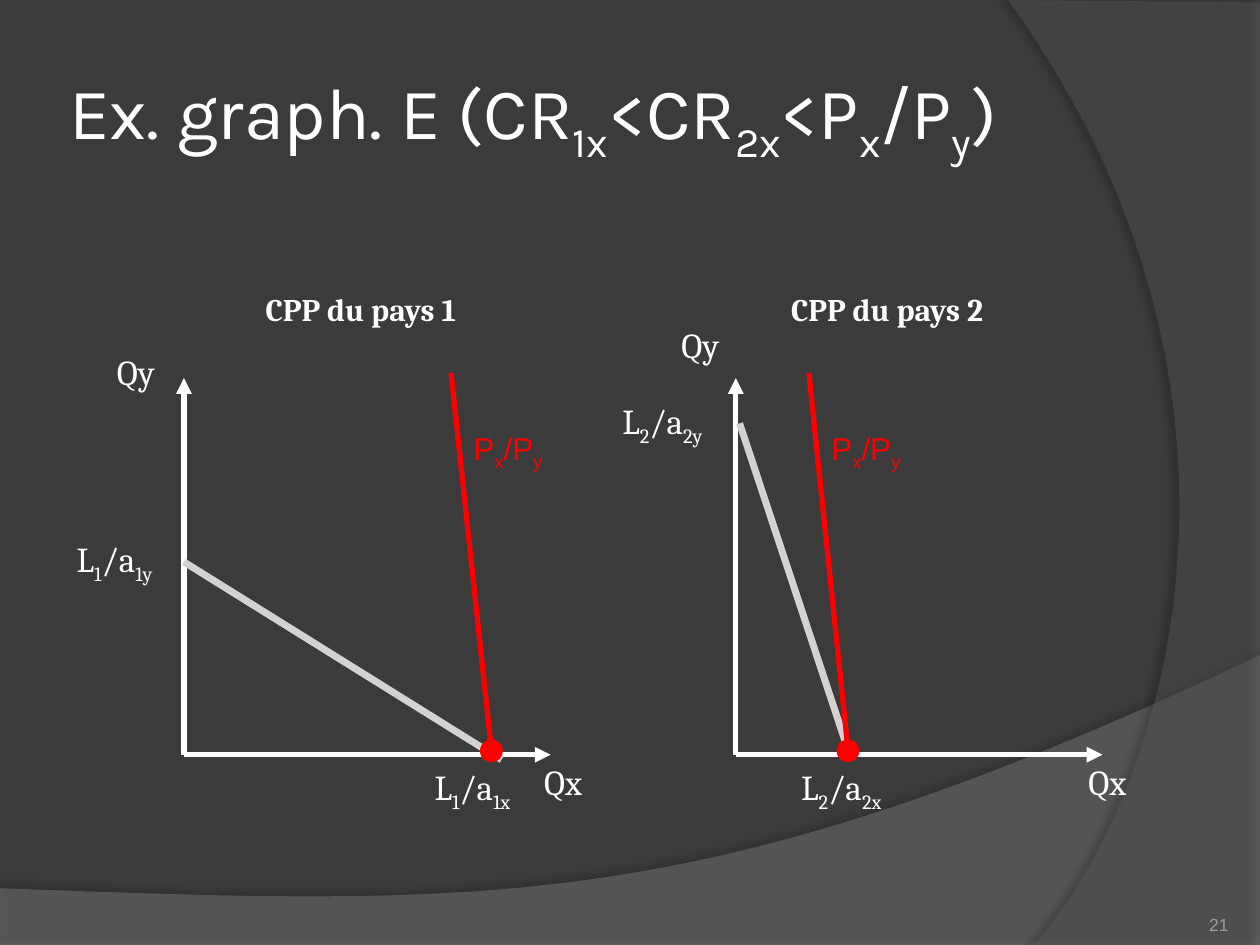
"""Build the slide comparing the production possibility curves of two countries."""
from lxml import etree
from pptx import Presentation
from pptx.dml.color import RGBColor
from pptx.enum.shapes import MSO_CONNECTOR, MSO_SHAPE
from pptx.enum.text import MSO_ANCHOR, MSO_AUTO_SIZE, PP_ALIGN
from pptx.oxml import parse_xml
from pptx.oxml.ns import nsdecls, qn
from pptx.util import Inches, Pt

STRAIGHT, OVAL = MSO_CONNECTOR.STRAIGHT, MSO_SHAPE.OVAL
MIDDLE, BOTTOM = MSO_ANCHOR.MIDDLE, MSO_ANCHOR.BOTTOM
LEFT, RIGHT = PP_ALIGN.LEFT, PP_ALIGN.RIGHT
FIT = MSO_AUTO_SIZE.SHAPE_TO_FIT_TEXT

THEME = {
    "ground": "3B3B3B", "white": "FFFFFF", "curve": "D4D2D0", "price": "FF0000",
    "title": ("FFFFFF", {"name": "Karla", "size": Pt(41.4), "bold": False}),
    "heading": ("FFFFFF", {"name": "Cambria", "size": Pt(18), "bold": True}),
    "label": ("FFFFFF", {"name": "Cambria", "size": Pt(20)}),
    "ratio": ("FF0000", {"name": "Arial", "size": Pt(18)}),
    "number": ("9D9B9A", {"name": "Arial", "size": Pt(10)}),
}

deck = Presentation()
deck.slide_width, deck.slide_height = Inches(10), Inches(7.5)
COLUMN, ROW = deck.slide_width / 10, deck.slide_height / 7.5
page = deck.slides.add_slide(deck.slide_layouts[5])
page.background.fill.solid()
page.background.fill.fore_color.rgb = RGBColor.from_string(THEME["ground"])


def write(box, text, style, place, **frame_format):
    """Place a box and fill it; parts between underscores become subscripts."""
    sides = zip(("left", "top", "width", "height"), place, (COLUMN, ROW) * 2)
    for side, length, unit in sides:
        setattr(box, side, round(length * unit))
    for name, value in frame_format.items():
        setattr(box.text_frame, name, value)
    para = box.text_frame.paragraphs[0]
    para.alignment = LEFT
    colour, font_format = THEME[style]
    for index, part in enumerate(text.split("_")):
        if part:
            span = para.add_run()
            span.text = part
            for name, value in font_format.items():
                setattr(span.font, name, value)
            span.font.color.rgb = RGBColor.from_string(colour)
            if index % 2:
                span.font._element.set("baseline", "-25000")
    return para


def draw_line(start, end, colour, width, arrow=False):
    """Draw a straight line, with an arrowhead at its end if asked."""
    ends = [round(length * unit) for point in (start, end)
            for length, unit in zip(point, (COLUMN, ROW))]
    line = page.shapes.add_connector(STRAIGHT, *ends)
    line.line.color.rgb = RGBColor.from_string(THEME[colour])
    line.line.width = Pt(width)
    if arrow:
        etree.SubElement(line.line._get_or_add_ln(), qn("a:tailEnd"), type="triangle")
    etree.SubElement(line._element.spPr, qn("a:effectLst"))


SWOOSHES = [
    {"corners": [(0, 7.05), (0, 7.51), (10, 7.51), (10, 5.2)],
     "curve": [(5.59, 7.29), (3.91, 7.19), (0, 7.05)],
     "fill": "7F7F7F", "opacity": 45, "shade": 35, "distance": 3.5, "angle": 270},
    {"corners": [(10, 0.02), (10, 7.5), (8.21, 7.5)],
     "curve": [(9.35, 6.19), (10.18, 3), (8, 0)],
     "fill": "5E5E5E", "opacity": 40, "shade": 45, "distance": 4, "angle": 180},
]
STEPS = 60
for swoosh in SWOOSHES:
    controls = [swoosh["corners"][-1], *swoosh["curve"]]
    points = list(swoosh["corners"])
    for step in range(1, STEPS + 1):
        t = step / STEPS
        weights = ((1 - t) ** 3, 3 * t * (1 - t) ** 2, 3 * t ** 2 * (1 - t), t ** 3)
        points.append(tuple(sum(weight * control[axis]
                                for weight, control in zip(weights, controls))
                            for axis in (0, 1)))
    outline = [(round(x * COLUMN), round(y * ROW)) for x, y in points]
    builder = page.shapes.build_freeform(*outline[0])
    builder.add_line_segments(outline[1:], close=True)
    shape = builder.convert_to_shape()
    shape.fill.solid()
    shape.fill.fore_color.rgb = RGBColor.from_string(swoosh["fill"])
    shape.line.fill.background()
    tint = shape._element.spPr.find(".//" + qn("a:srgbClr"))
    etree.SubElement(tint, qn("a:alpha"), val=str(swoosh["opacity"] * 1000))
    shape._element.spPr.append(parse_xml(
        f'<a:effectLst {nsdecls("a")}><a:outerShdw blurRad="{Pt(4)}" '
        f'dist="{Pt(swoosh["distance"])}" dir="{swoosh["angle"] * 60000}" '
        f'algn="ctr" rotWithShape="0"><a:srgbClr val="000000">'
        f'<a:alpha val="{swoosh["shade"] * 1000}"/></a:srgbClr>'
        f'</a:outerShdw></a:effectLst>'))

MARGINS = ("margin_left", "margin_top", "margin_right", "margin_bottom")
write(page.shapes.title, "Ex. graph. E (CR_1x_<CR_2x_<P_x_/P_y_)", "title",
      (0.5, 0.3, 8.17, 1.25), vertical_anchor=MIDDLE, word_wrap=True,
      auto_size=MSO_AUTO_SIZE.NONE, **dict.fromkeys(MARGINS, Inches(0.05)))

BASE, TOP, AXIS, DOT = 5.99, 3, 2.91, 0.16
PRICE_TOP, PRICE_END = 2.96, 5.95
COUNTRIES = [
    {"number": 1, "origin": 1.46, "heading": 2.01, "qx": 4.22, "qy": (0.83, 2.73),
     "curve": ((1.46, 4.46), (3.98, 6.03)), "x_label": 3.35, "y_label": (0.51, 4.22),
     "price": (3.58, 3.9), "ratio": 3.66},
    {"number": 2, "origin": 5.84, "heading": 6.18, "qx": 8.54, "qy": (5.31, 2.52),
     "curve": ((5.87, 3.36), (6.73, 5.95)), "x_label": 6.26, "y_label": (4.84, 3.12),
     "price": (6.42, 6.73), "ratio": 6.5},
]
for country in COUNTRIES:
    number, corner = country["number"], (country["origin"], BASE)
    draw_line(corner, (country["origin"] + AXIS, BASE), "white", 3, arrow=True)
    draw_line(corner, (country["origin"], TOP), "white", 3, arrow=True)
    draw_line(*country["curve"], "curve", 4)
    start, end = country["price"]
    draw_line((start, PRICE_TOP), (end, PRICE_END), "price", 3)
    labels = [
        (f"CPP du pays {number}", "heading", (country["heading"], 2.25, 1.77, 0.4), False),
        ("Qx", "label", (country["qx"], BASE, 0.55, 0.44), False),
        ("Qy", "label", (*country["qy"], 0.55, 0.44), False),
        (f"L_{number}_/a_{number}x_", "label", (country["x_label"], 6.03, 0.85, 0.44), False),
        (f"L_{number}_/a_{number}y_", "label", (*country["y_label"], 0.98, 0.44), True),
        ("P_x_/P_y_", "ratio", (country["ratio"], 3.36, 0.94, 0.4), True),
    ]
    for text, style, place, wrap in labels:
        write(page.shapes.add_textbox(0, 0, 0, 0), text, style, place,
              word_wrap=wrap, auto_size=FIT)
    dot = page.shapes.add_shape(OVAL, round((end - DOT / 2) * COLUMN), round(5.88 * ROW),
                                round(DOT * COLUMN), round(DOT * ROW))
    dot.shadow.inherit = False
    dot.fill.solid()
    for paint in (dot.fill.fore_color, dot.line.color):
        paint.rgb = RGBColor.from_string(THEME["price"])
    dot.line.width = Pt(1.5)

folio = write(page.shapes.add_textbox(0, 0, 0, 0), "21", "number",
              (8.92, 7.02, 0.83, 0.4), vertical_anchor=BOTTOM, word_wrap=True,
              **dict.fromkeys(MARGINS, 0))
folio.alignment = RIGHT
deck.save("out.pptx")
